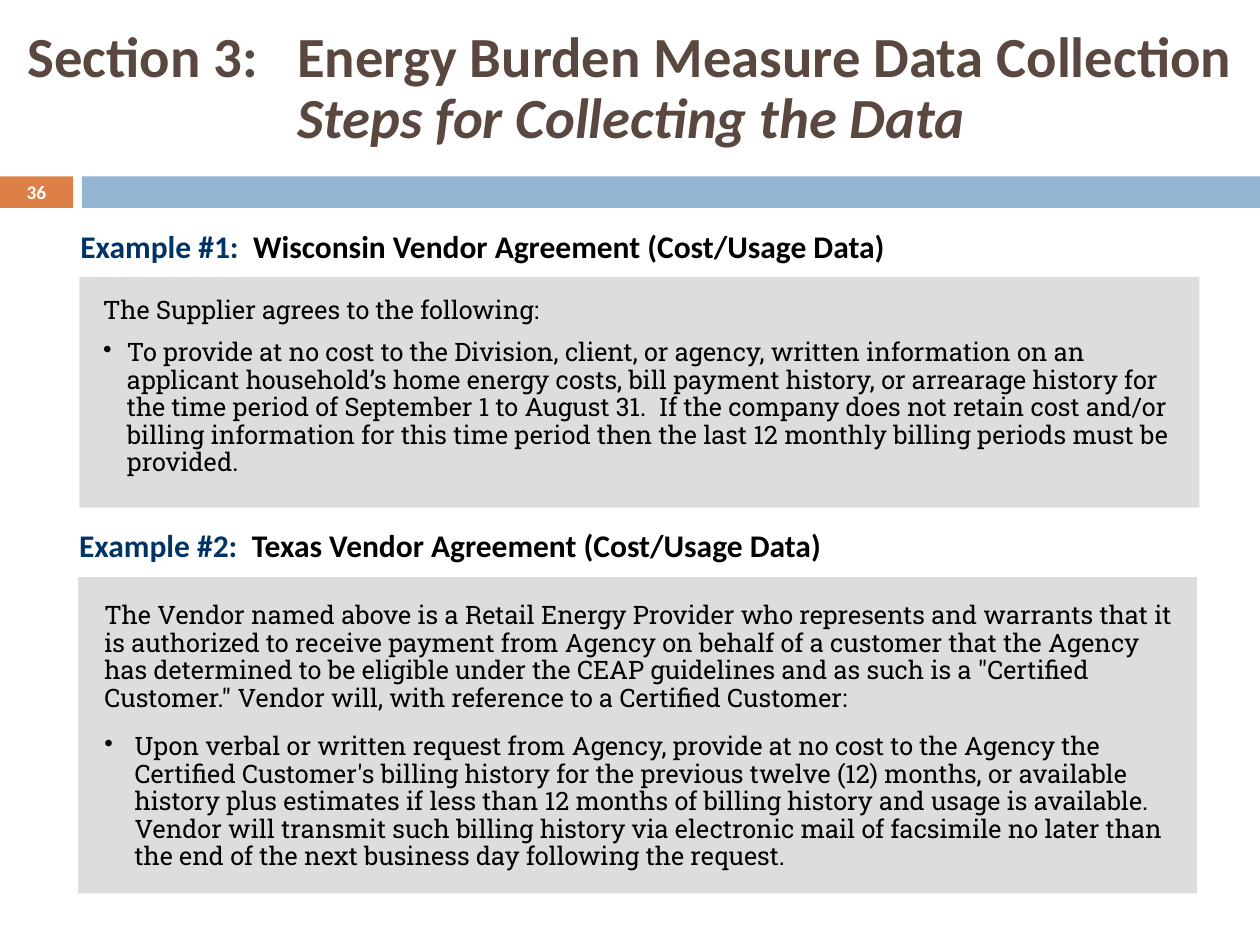
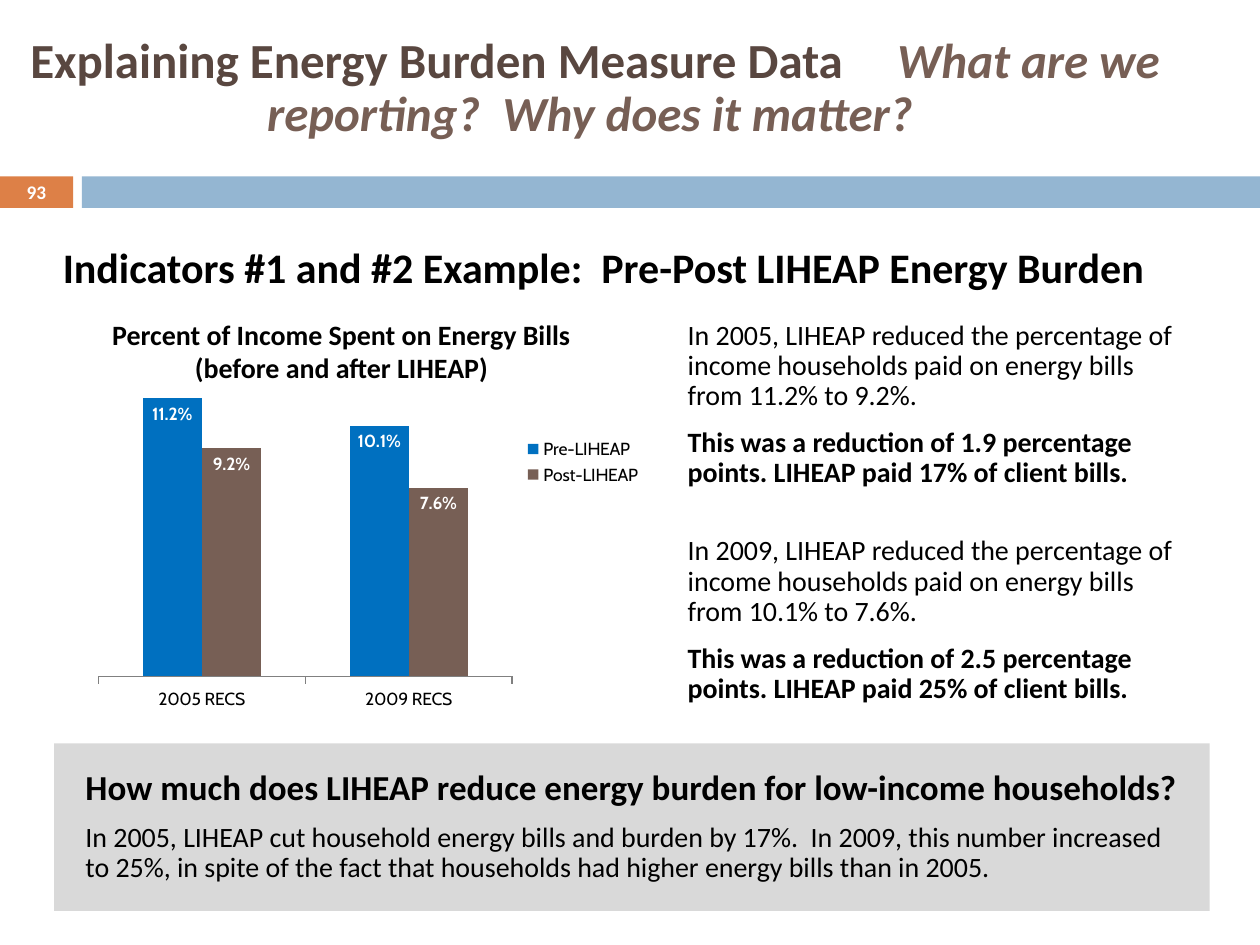
"""Build two slides on collecting and explaining energy burden data."""
from pptx import Presentation
from pptx.chart.data import CategoryChartData
from pptx.dml.color import RGBColor
from pptx.enum.chart import XL_CHART_TYPE, XL_LABEL_POSITION, XL_LEGEND_POSITION, XL_TICK_MARK
from pptx.enum.shapes import MSO_SHAPE
from pptx.enum.text import MSO_ANCHOR, PP_ALIGN
from pptx.oxml import parse_xml
from pptx.oxml.ns import nsdecls, qn
from pptx.util import Inches, Pt

RECT = MSO_SHAPE.RECTANGLE
LEFT, CENTER = PP_ALIGN.LEFT, PP_ALIGN.CENTER
TOP, MIDDLE = MSO_ANCHOR.TOP, MSO_ANCHOR.MIDDLE
COLUMN = XL_CHART_TYPE.COLUMN_CLUSTERED
INSIDE = XL_LABEL_POSITION.INSIDE_END
RIGHT = XL_LEGEND_POSITION.RIGHT
NONE, OUT = XL_TICK_MARK.NONE, XL_TICK_MARK.OUTSIDE

BLACK, WHITE, NAVY = "000000", "FFFFFF", "003366"
DARK, BROWN, BLUE = "594740", "775F55", "0070C0"
ORANGE, SKY, GRAY = "DD8047", "94B6D2", "808080"
SANS, SLAB, ROUND = "Calibri", "Roboto Slab", "Cabin"


def style(size, color=BLACK, bold=False, font=SANS, slant=False):
    """Collect the look of a run."""
    return dict(size=size, color=color, bold=bold, font=font, slant=slant)


def para(*runs, left=0, hang=0, line=0.9, after=0, bullet=False, align=LEFT):
    """Collect the runs and layout of a paragraph."""
    return dict(runs=runs, left=left, hang=hang, line=line, after=after,
                bullet=bullet, align=align)


MARK, HEAD = style(18, NAVY, True), style(18, bold=True)
QUOTE = style(14.5, font=SLAB)
BODY, STRONG = style(16), style(16, bold=True)
BIG, BIG_IT = style(32.4, DARK, True), style(32.4, DARK, True, slant=True)
MID, MID_IT = style(28, DARK, True), style(28, BROWN, True, slant=True)

STEPS = para(("Section 3:  \tEnergy Burden Measure Data Collection", BIG), None,
             ("Steps for Collecting the Data", BIG_IT), left=2.26, hang=2.14)
WHY = para(("Explaining Energy Burden Measure Data\t", MID),
           ("What are we reporting?  Why does it matter?", MID_IT), left=2, hang=1.88)

PANELS = [(0.63, 2.2, 8.89, 1.83), (0.62, 4.58, 8.88, 2.51)]
DEALS = [
    ((0.41, 1.79, 9, 2.12), [
        para(("Example #1:  ", MARK), ("Wisconsin Vendor Agreement (Cost/Usage Data)", HEAD),
             left=0.13, after=18),
        para(("The Supplier agrees to the following:", QUOTE), left=0.31, after=8.7),
        para(("To provide at no cost to the Division, client, or agency, written information "
              "on an applicant household’s home energy costs, bill payment history, or "
              "arrearage history for the time period of September 1 to August 31.  If the "
              "company does not retain cost and/or billing information for this time period "
              "then the last 12 monthly billing periods must be provided.", QUOTE),
             left=0.5, hang=0.19, bullet=True)]),
    ((0.41, 4.16, 9, 2.82), [
        para(("Example #2:  ", MARK), ("Texas Vendor Agreement (Cost/Usage Data)", HEAD),
             left=0.12, after=22),
        para(("The Vendor named above is a Retail Energy Provider who represents and warrants "
              "that it is authorized to receive payment from Agency on behalf of a customer "
              "that the Agency has determined to be eligible under the CEAP guidelines and as "
              "such is a \"Certified Customer.\" Vendor will, with reference to a Certified "
              "Customer:", QUOTE), left=0.32, after=12.2),
        para(("Upon verbal or written request from Agency, provide at no cost to the Agency "
              "the Certified Customer's billing history for the previous twelve (12) months, "
              "or available history plus estimates if less than 12 months of billing history "
              "and usage is available. Vendor will transmit such billing history via "
              "electronic mail of facsimile no later than the end of the next business day "
              "following the request.", QUOTE), left=0.56, hang=0.24, bullet=True)]),
]

TOPIC = para(("Indicators #1 and #2 Example:  Pre-Post LIHEAP Energy Burden",
              style(24, bold=True)), left=0.12, line=1)
LABEL = para(("Percent of Income Spent on Energy Bills (before and after LIHEAP)", STRONG),
             line=1, align=CENTER)
YEARS = [("2005", "11.2%", "9.2%", "1.9", "17%"), ("2009", "10.1%", "7.6%", "2.5", "25%")]
ANSWER = [
    para(("How much does LIHEAP reduce energy burden for low-income households?",
          style(20, bold=True)), after=8.8),
    para(("In 2005, LIHEAP cut household energy bills and burden by 17%.  In 2009, this number "
          "increased to 25%, in spite of the fact that households had higher energy bills than "
          "in 2005.", BODY)),
]
CATS = ["2005 RECS", "2009 RECS"]
SERIES = [("Pre-LIHEAP", (0.112, 0.101), BLUE), ("Post-LIHEAP", (0.092, 0.076), BROWN)]


def rgb(code):
    """Turn a hex string into a colour."""
    return RGBColor.from_string(code)


def place(box):
    """Turn a box in inches into lengths."""
    return [Inches(n) for n in box]


def dress(font, look):
    """Give a font its look."""
    font.size, font.name = Pt(look["size"]), look["font"]
    font.bold, font.italic = look["bold"], look["slant"]
    font.color.rgb = rgb(look["color"])


def write(frame, paras, anchor=TOP):
    """Fill a text frame run by run."""
    frame.word_wrap, frame.vertical_anchor = True, anchor
    for i, item in enumerate(paras):
        p = frame.add_paragraph() if i else frame.paragraphs[0]
        p.alignment, p.line_spacing = item["align"], item["line"]
        p.space_before, p.space_after = Pt(0), Pt(item["after"])
        props = p._p.get_or_add_pPr()
        props.set("marL", str(Inches(item["left"])))
        props.set("indent", str(-Inches(item["hang"])))
        if item["bullet"]:
            props.append(parse_xml(f'<a:buChar {nsdecls("a")} char="•"/>'))
        for part in item["runs"]:
            if part is None:
                p.add_line_break()
                continue
            run = p.add_run()
            run.text = part[0]
            dress(run.font, part[1])


def block(slide, box, color):
    """Add a plain filled rectangle."""
    shape = slide.shapes.add_shape(RECT, *place(box))
    shape.shadow.inherit = False
    shape.fill.solid()
    shape.fill.fore_color.rgb = rgb(color)
    shape.line.fill.background()
    return shape


def note(slide, box, paras):
    """Add a text box."""
    write(slide.shapes.add_textbox(*place(box)).text_frame, paras)


def start(deck, title, left, page):
    """Add a slide with its title, bands and page number."""
    slide = deck.slides.add_slide(deck.slide_layouts[5])
    head = slide.shapes.title
    head.left, head.top, head.width, head.height = place((left, 0.17, 10, 1.08))
    write(head.text_frame, [title], MIDDLE)
    tag = block(slide, (0, 1.4, 0.58, 0.25), ORANGE)
    block(slide, (0.65, 1.4, 9.35, 0.25), SKY)
    frame = tag.text_frame
    frame.margin_top = frame.margin_bottom = 0
    write(frame, [para((page, style(11, WHITE, True)), line=1, align=CENTER)], MIDDLE)
    return slide


def fix(node, index, box, inner=False):
    """Set the place of a chart part as shares of the chart."""
    for old in node.findall(qn("c:layout")):
        node.remove(old)
    target = '<c:layoutTarget val="inner"/>' if inner else ""
    modes = "".join(f'<c:{k}Mode val="edge"/>' for k in "xy")
    sizes = "".join(f'<c:{k} val="{v}"/>' for k, v in zip("xywh", box))
    node.insert(index, parse_xml(
        f'<c:layout {nsdecls("c")}><c:manualLayout>{target}{modes}{sizes}'
        '</c:manualLayout></c:layout>'))


def draw(slide):
    """Add the chart of income shares."""
    data = CategoryChartData(number_format="0.0%")
    data.categories = CATS
    for name, vals, _ in SERIES:
        data.add_series(name, vals)
    chart = slide.shapes.add_chart(COLUMN, *place((0.69, 2.95, 4.5, 2.75)), data).chart
    dress(chart.font, style(10, font=ROUND))
    chart.has_title = False
    chart.has_legend = True
    legend = chart.legend
    legend.position, legend.include_in_layout = RIGHT, False
    dress(legend.font, style(10, font=ROUND))
    axis = chart.value_axis
    axis.minimum_scale, axis.maximum_scale = 0, 0.12
    axis.has_major_gridlines = axis.visible = False
    base = chart.category_axis
    base.major_tick_mark, base.minor_tick_mark = OUT, NONE
    base.format.line.color.rgb = rgb(GRAY)
    dress(base.tick_labels.font, style(10, font=ROUND))
    plot = chart.plots[0]
    plot.gap_width, plot.overlap, plot.vary_by_categories = 150, 0, False
    for bar, (_, _, color) in zip(plot.series, SERIES):
        bar.format.fill.solid()
        bar.format.fill.fore_color.rgb = rgb(color)
        tags = bar.data_labels
        tags.show_value, tags.position = True, INSIDE
        tags.number_format, tags.number_format_is_linked = "0.0%", False
        dress(tags.font, style(10, WHITE, True, ROUND))
    fix(chart._chartSpace.chart.plotArea, 0, (0.02, 0.02, 0.73, 0.86), True)
    fix(legend._element, 1, (0.76, 0.18, 0.23, 0.16))


def main():
    """Build and save the deck."""
    deck = Presentation()
    deck.slide_width, deck.slide_height = Inches(10), Inches(7.5)

    slide = start(deck, STEPS, 0, "36")
    for box in PANELS:
        block(slide, box, "DDDDDD")
    for box, paras in DEALS:
        note(slide, box, paras)

    slide = start(deck, WHY, 0.02, "93")
    note(slide, (0.28, 1.87, 9.2, 0.58), [TOPIC])
    note(slide, (0.69, 2.47, 4.04, 0.64), [LABEL])
    for i, (year, pre, post, drop, paid) in enumerate(YEARS):
        shape = block(slide, (5.36, 2.5 + 1.71 * i, 4.13, 1.45), WHITE)
        write(shape.text_frame, [
            para((f"In {year}, LIHEAP reduced the percentage of income households paid on "
                  f"energy bills from {pre} to {post}.", BODY), after=9.5),
            para((f"This was a reduction of {drop} percentage points. LIHEAP paid {paid} of "
                  "client bills.", STRONG))])
    block(slide, (0.43, 5.9, 9.17, 1.33), "D9D9D9")
    note(slide, (0.58, 6.06, 8.88, 1.01), ANSWER)
    draw(slide)
    deck.save("out.pptx")


if __name__ == "__main__":
    main()
